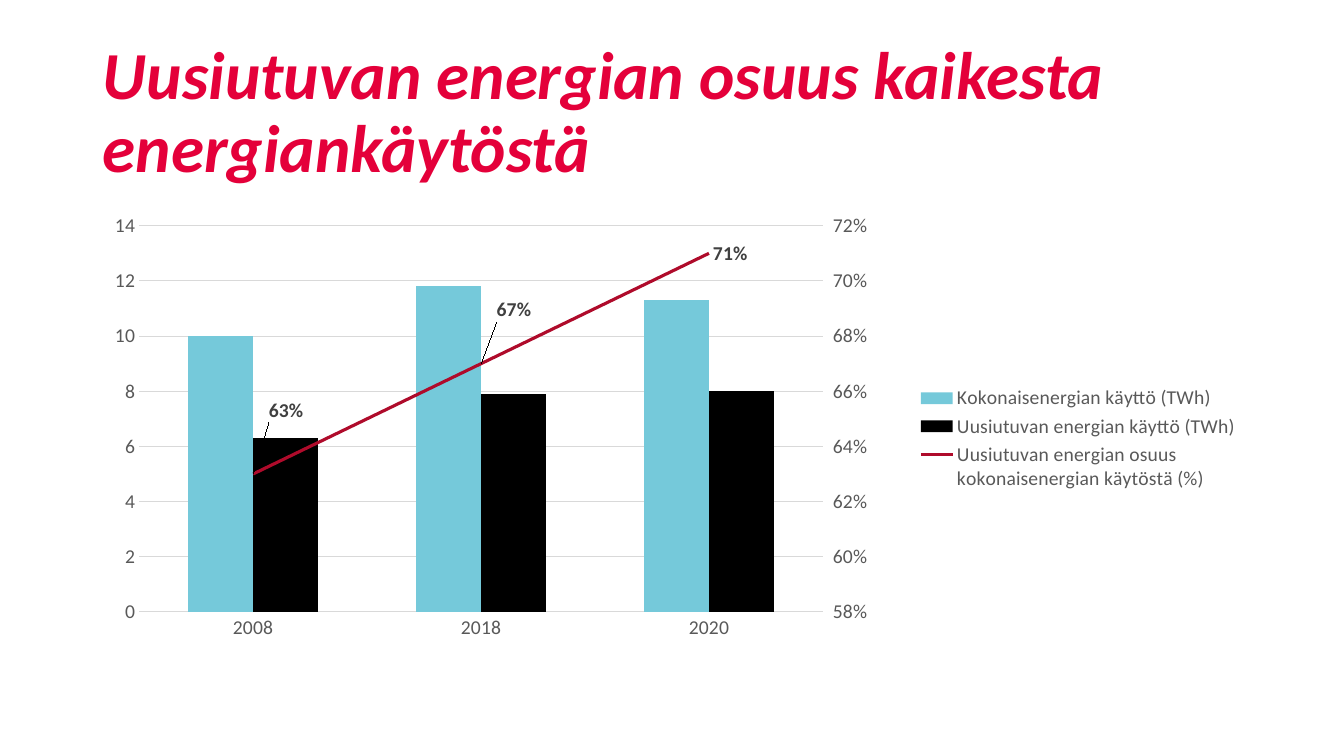
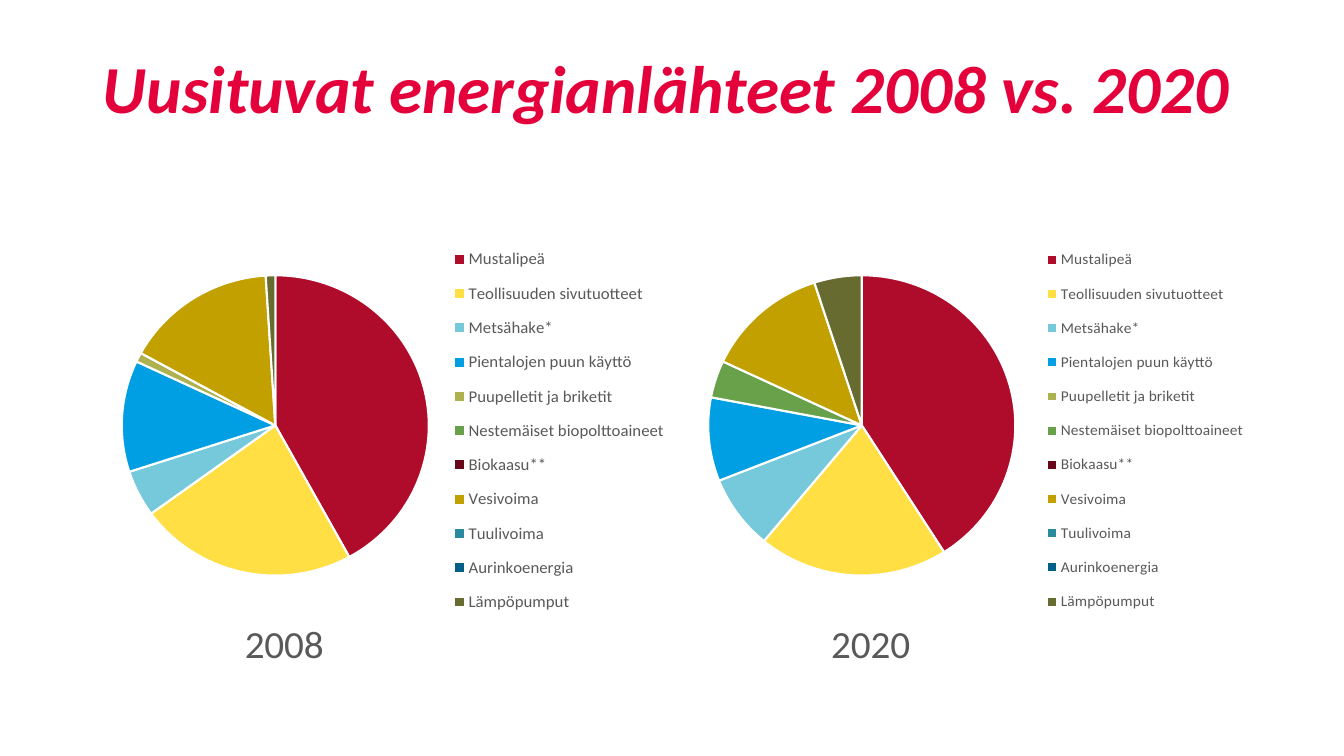
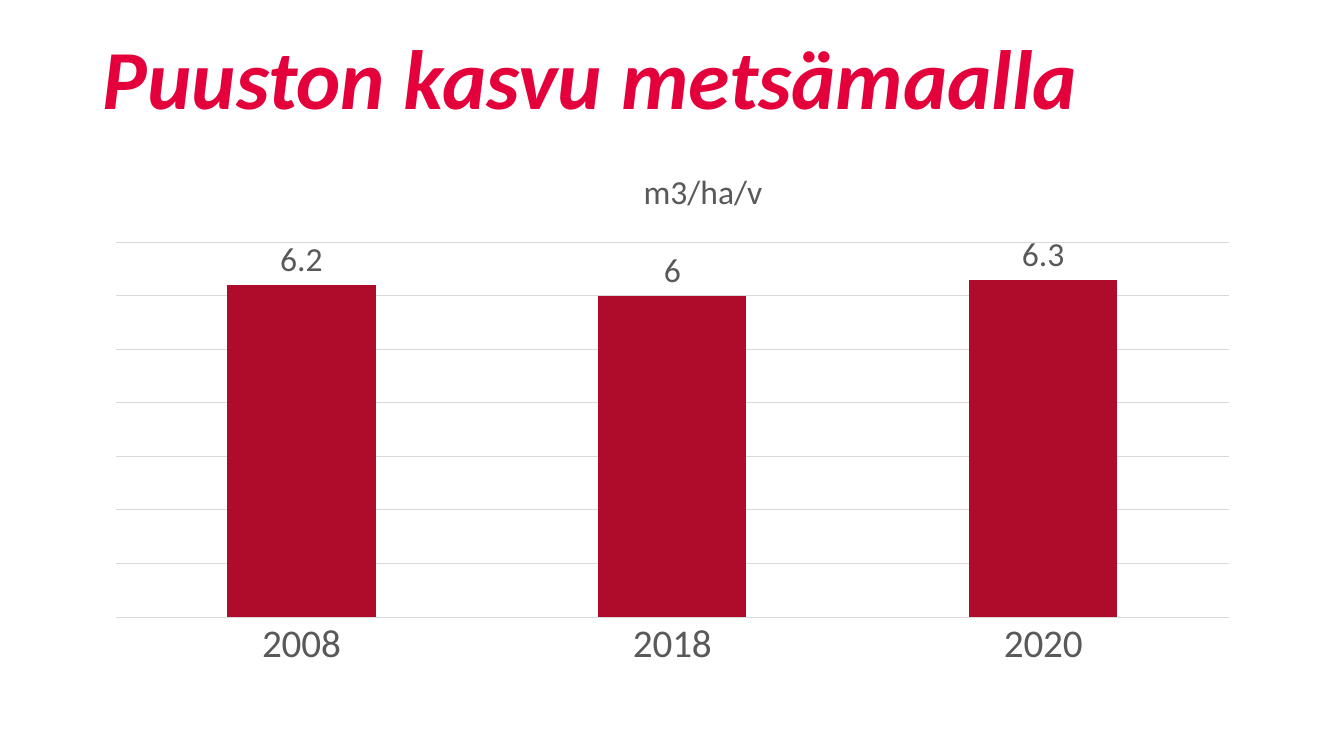
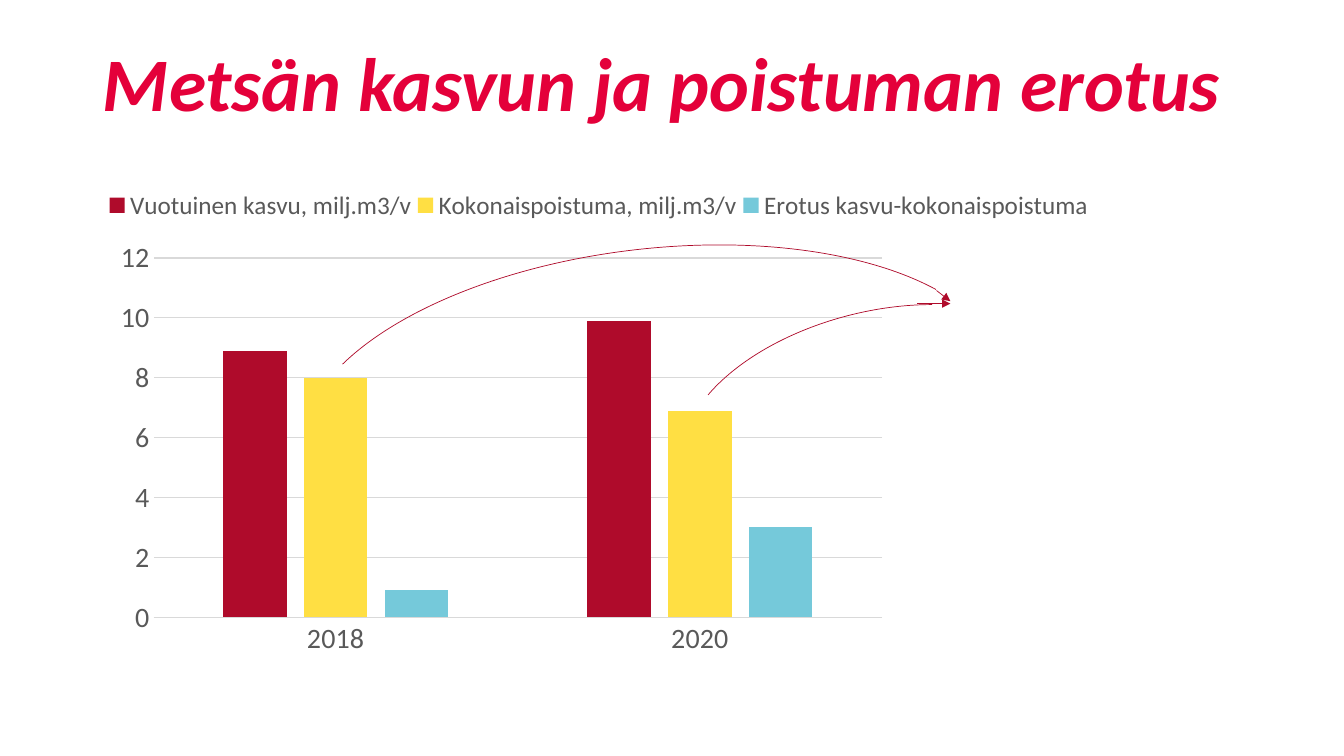
from pptx import Presentation
from pptx.chart.data import CategoryChartData
from pptx.dml.color import RGBColor
from pptx.enum.chart import (XL_CHART_TYPE, XL_LABEL_POSITION,
                             XL_LEGEND_POSITION, XL_TICK_MARK)
from pptx.enum.dml import MSO_LINE
from pptx.enum.shapes import MSO_CONNECTOR, MSO_SHAPE
from pptx.enum.text import MSO_ANCHOR, MSO_AUTO_SIZE, PP_ALIGN
from pptx.oxml import parse_xml
from pptx.oxml.ns import nsdecls, qn
from pptx.util import Cm, Pt

COLUMN, PIE = XL_CHART_TYPE.COLUMN_CLUSTERED, XL_CHART_TYPE.PIE
RIGHT, TOP = XL_LEGEND_POSITION.RIGHT, XL_LEGEND_POSITION.TOP
ABOVE, BESIDE = XL_LABEL_POSITION.OUTSIDE_END, XL_LABEL_POSITION.RIGHT
NO_TICK = XL_TICK_MARK.NONE
FONT = "Calibri"
COLORS = {
    "title": "E4003A", "text": "595959", "label": "404040", "grid": "D9D9D9",
    "white": "FFFFFF", "black": "000000", "red": "AF0B2B", "yellow": "FFDF43",
    "sky": "75C9DA", "blue": "009FE3", "olive": "ADB150", "green": "69A04A",
    "wine": "69071A", "gold": "C1A000", "teal": "2A8B9F", "navy": "005F88",
    "moss": "686B30",
}

LEFT, WIDE = 2.34, 29.21
TALL = (1.12, 3.71)
SHORT = (0.76, 2.59)

USE = {
    "years": ["2008", "2018", "2020"],
    "series": [
        ("Kokonaisenergian käyttö (TWh)", [10, 11.8, 11.3], "sky"),
        ("Uusiutuvan energian käyttö (TWh)", [6.3, 7.9, 8], "black"),
    ],
    "share": ("Uusiutuvan energian osuus kokonaisenergian käytöstä (%)",
              [0.63, 0.67, 0.71], "red"),
    "shifts": [(0.01, -0.13), (0.01, -0.11)],
}
# Source, share in 2008, share in 2020, colour
SOURCES = [
    ("Mustalipeä", 42, 41, "red"),
    ("Teollisuuden sivutuotteet", 23, 20, "yellow"),
    ("Metsähake*", 5, 8, "sky"),
    ("Pientalojen puun käyttö", 12, 9, "blue"),
    ("Puupelletit ja briketit", 1, 0, "olive"),
    ("Nestemäiset biopolttoaineet", 0, 4, "green"),
    ("Biokaasu**", 0, 0, "wine"),
    ("Vesivoima", 16, 13, "gold"),
    ("Tuulivoima", 0, 0, "teal"),
    ("Aurinkoenergia", 0, 0, "navy"),
    ("Lämpöpumput", 1, 5, "moss"),
]
# Year, column in SOURCES, left edge, legend size
PIES = [("2008", 1, LEFT, 12), ("2020", 2, 17.12, 11)]
GROWTH = {"years": ["2008", "2018", "2020"],
          "series": [("m3/ha/v", [6.2, 6, 6.3], "red")]}
BALANCE = {
    "years": ["2018", "2020"],
    "series": [
        ("Vuotuinen kasvu, milj.m3/v", [8.9, 9.9], "red"),
        ("Kokonaispoistuma, milj.m3/v", [8, 6.9], "yellow"),
        ("Erotus kasvu-kokonaispoistuma", [0.9, 3], "sky"),
    ],
}
# Box, rotation, start and end of the arc
ARCS = [
    ((7.52, 6.27, 17.91, 8.43), 353.4, (117.641, 205.469)),
    ((17.09, 7.87, 9.91, 5.44), 345.4, (121.947, 186.625)),
]
TIPS = [(23.6, 7.32, 23.95, 7.59), (23.11, 7.65, 23.95, 7.65)]


def color(name):
    return RGBColor.from_string(COLORS[name])


def style(font, size, shade="text", bold=False):
    font.name, font.size, font.bold = FONT, Pt(size), bold
    font.color.rgb = color(shade)


def stroke(line, shade, width):
    line.color.rgb = color(shade)
    line.width = Pt(width)


def add_slide(deck, title, size, band=SHORT):
    slide = deck.slides.add_slide(deck.slide_layouts[5])
    head = slide.shapes.title
    head.left, head.width = Cm(LEFT), Cm(WIDE)
    head.top, head.height = map(Cm, band)
    frame = head.text_frame
    frame.text = title
    frame.auto_size = MSO_AUTO_SIZE.NONE
    frame.vertical_anchor = MSO_ANCHOR.BOTTOM
    line = frame.paragraphs[0]
    line.alignment, line.line_spacing = PP_ALIGN.LEFT, 0.9
    font = line.runs[0].font
    style(font, size, "title", True)
    font.italic = True
    return slide


def place(parent, spot, box, edge=True, inner=False):
    """Give a chart part a manual layout in fractions of the chart."""
    for old in parent.findall(qn("c:layout")):
        parent.remove(old)
    tags = [("layoutTarget", "inner")] if inner else []
    if edge:
        tags += [("xMode", "edge"), ("yMode", "edge")]
    tags += zip("xywh", box)
    body = "".join(f'<c:{tag} val="{val}"/>' for tag, val in tags)
    parent.insert(spot, parse_xml(
        f'<c:layout {nsdecls("c")}><c:manualLayout>{body}'
        '</c:manualLayout></c:layout>'))


def add_chart(slide, kind, box, cats, series, size, plot):
    data = CategoryChartData()
    data.categories = cats
    for name, vals, form in series:
        data.add_series(name, vals, form)
    chart = slide.shapes.add_chart(kind, *map(Cm, box), data).chart
    style(chart.font, size)
    chart.has_title = chart.has_legend = False
    place(chart.element.chart.plotArea, 0, plot, inner=True)
    return chart


def add_legend(chart, side, size, box, overlay=False):
    chart.has_legend = True
    legend = chart.legend
    legend.position, legend.include_in_layout = side, overlay
    style(legend.font, size)
    place(legend._element, 1, box)


def add_title(chart, text, size, spot):
    frame = chart.chart_title.text_frame
    frame.text = text
    style(frame.paragraphs[0].runs[0].font, size)
    place(chart.chart_title._element, 1, spot)


def add_columns(slide, box, info, size, plot, top, step, gap=150, overlap=0):
    series = [(name, vals, "General") for name, vals, _ in info["series"]]
    if "share" in info:
        series.append((*info["share"][:2], "0%"))
    chart = add_chart(slide, COLUMN, box, info["years"], series, size, plot)
    bars = chart.plots[0]
    bars.gap_width, bars.overlap = gap, overlap
    bars.vary_by_categories = False
    for bar, (_, _, shade) in zip(bars.series, info["series"]):
        bar.format.fill.solid()
        bar.format.fill.fore_color.rgb = color(shade)
    years, scale = chart.category_axis, chart.value_axis
    for axis in (years, scale):
        axis.major_tick_mark = axis.minor_tick_mark = NO_TICK
        style(axis.tick_labels.font, size)
    stroke(years.format.line, "grid", 0.75)
    scale.format.line.fill.background()
    scale.has_major_gridlines = True
    stroke(scale.major_gridlines.format.line, "grid", 0.75)
    scale.minimum_scale, scale.maximum_scale = 0, top
    scale.major_unit = step
    return chart


def add_share(chart, info, size):
    """Turn the last column series into a line on a right-hand axis."""
    area = chart.element.chart.plotArea
    bars = area.find(qn("c:barChart"))
    ser = bars.findall(qn("c:ser"))[-1]
    bars.remove(ser)
    for old in ser.findall(qn("c:invertIfNegative")):
        ser.remove(old)
    line = parse_xml(
        f'<c:lineChart {nsdecls("c")}><c:grouping val="standard"/>'
        '<c:varyColors val="0"/><c:marker val="1"/>'
        '<c:axId val="5001"/><c:axId val="5002"/></c:lineChart>')
    line.insert(2, ser)
    bars.addnext(line)
    hidden = parse_xml(
        f'<c:catAx {nsdecls("c")}><c:axId val="5001"/>'
        '<c:scaling><c:orientation val="minMax"/></c:scaling>'
        '<c:delete val="1"/><c:axPos val="b"/><c:crossAx val="5002"/>'
        '</c:catAx>')
    right = parse_xml(
        f'<c:valAx {nsdecls("c", "a")}><c:axId val="5002"/>'
        '<c:scaling><c:orientation val="minMax"/><c:max val="0.72"/>'
        '<c:min val="0.58"/></c:scaling><c:delete val="0"/>'
        '<c:axPos val="r"/><c:numFmt formatCode="0%" sourceLinked="0"/>'
        '<c:majorTickMark val="out"/><c:minorTickMark val="none"/>'
        '<c:tickLblPos val="nextTo"/>'
        '<c:spPr><a:ln><a:noFill/></a:ln></c:spPr>'
        f'<c:txPr><a:bodyPr/><a:p><a:pPr><a:defRPr sz="{size * 100}">'
        f'<a:solidFill><a:srgbClr val="{COLORS["text"]}"/></a:solidFill>'
        f'<a:latin typeface="{FONT}"/></a:defRPr></a:pPr></a:p></c:txPr>'
        '<c:crossAx val="5001"/><c:crosses val="max"/>'
        '<c:majorUnit val="0.02"/></c:valAx>')
    last = area.findall(qn("c:valAx"))[-1]
    last.addnext(right)
    right.addnext(hidden)

    share = chart.plots[1].series[0]
    share.smooth = False
    share.marker.style = None
    share._element.get_or_add_marker().get_or_add_symbol().set("val", "none")
    stroke(share.format.line, info["share"][2], 2.25)
    share.format.line.dash_style = MSO_LINE.SOLID
    labels = share.data_labels
    labels.show_value, labels.position = True, BESIDE
    labels.number_format, labels.number_format_is_linked = "0%", False
    style(labels.font, size, "label", True)
    for i, shift in enumerate(info["shifts"]):
        label = share.points[i].data_label
        style(label.font, size, "label", True)
        label.position = BESIDE
        place(label._get_or_add_dLbl(), 1, shift, edge=False)


def add_pie(slide, year, col, left, size):
    names = [row[0] for row in SOURCES]
    vals = [row[col] for row in SOURCES]
    chart = add_chart(slide, PIE, (left, 3.68, 14.6, 13.46), names,
                      [(year, vals, "General")], 10,
                      (0.05, 0.12, 0.53, 0.83))
    pie = chart.plots[0]
    pie.vary_by_categories = True
    for i, row in enumerate(SOURCES):
        part = pie.series[0].points[i].format
        part.fill.solid()
        part.fill.fore_color.rgb = color(row[-1])
        stroke(part.line, "white", 1.5)
    add_legend(chart, RIGHT, size, (0.61, 0.17, 0.39, 0.75), True)
    add_title(chart, year, 28, (0.25, 0.89))


def add_arc(slide, box, turn, ends):
    arc = slide.shapes.add_shape(MSO_SHAPE.ARC, *map(Cm, box))
    arc.shadow.inherit = False
    arc.rotation = turn
    arc.adjustments[0], arc.adjustments[1] = ends
    arc.fill.background()
    stroke(arc.line, "red", 0.5)


def add_tip(slide, ends):
    tip = slide.shapes.add_connector(MSO_CONNECTOR.STRAIGHT, *map(Cm, ends))
    stroke(tip.line, "red", 0.5)
    tip.line._get_or_add_ln().append(
        parse_xml(f'<a:tailEnd {nsdecls("a")} type="triangle"/>'))
    tip._element.spPr.append(parse_xml(f'<a:effectLst {nsdecls("a")}/>'))


def main():
    deck = Presentation()
    deck.slide_width, deck.slide_height = Cm(33.87), Cm(19.05)

    slide = add_slide(
        deck, "Uusiutuvan energian osuus kaikesta energiankäytöstä", 48, TALL)
    chart = add_columns(slide, (LEFT, 4.95, WIDE, 12.32), USE, 14,
                        (0.04, 0.06, 0.59, 0.79), 14, 2)
    add_share(chart, USE, 14)
    add_legend(chart, RIGHT, 14, (0.71, 0.38, 0.28, 0.23))

    slide = add_slide(deck, "Uusituvat energianlähteet 2008 vs. 2020", 48)
    for pie in PIES:
        add_pie(slide, *pie)

    slide = add_slide(deck, "Puuston kasvu metsämaalla", 60)
    chart = add_columns(slide, (LEFT, 3.84, WIDE, 13.31), GROWTH, 28,
                        (0.02, 0.17, 0.96, 0.71), 7, 1)
    chart.value_axis.visible = False
    add_title(chart, "m3/ha/v", 24, (0.47, 0.02))
    bars = chart.plots[0]
    bars.has_data_labels = True
    labels = bars.data_labels
    labels.show_value, labels.position = True, ABOVE
    style(labels.font, 24)

    slide = add_slide(deck, "Metsän kasvun ja poistuman erotus", 54)
    chart = add_columns(slide, (LEFT, 3.84, 25.5, 13.31), BALANCE, 20,
                        (0.06, 0.2, 0.72, 0.68), 12, 2, 219, -27)
    add_legend(chart, TOP, 18, (0.01, 0.06, 0.98, 0.08))
    for arc in ARCS:
        add_arc(slide, *arc)
    for tip in TIPS:
        add_tip(slide, tip)

    deck.save("out.pptx")


if __name__ == "__main__":
    main()
